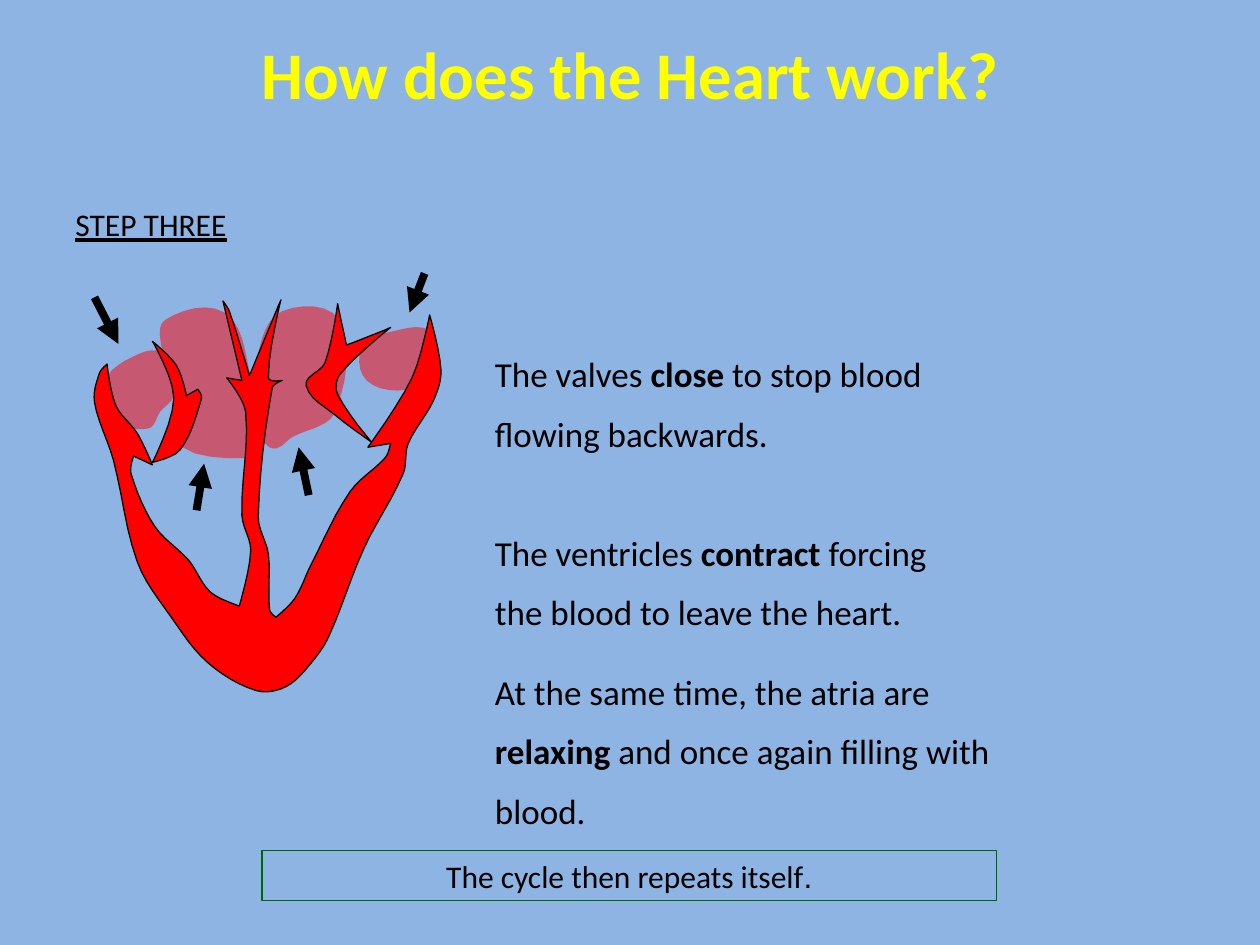
from math import hypot

from lxml.etree import SubElement
from pptx import Presentation
from pptx.dml.color import RGBColor
from pptx.enum.shapes import MSO_CONNECTOR, MSO_SHAPE
from pptx.enum.text import MSO_ANCHOR, MSO_AUTO_SIZE, PP_ALIGN
from pptx.oxml.ns import qn
from pptx.util import Inches, Pt

WIDE, HIGH = 10, 7.5
HUES = {"back": "8EB4E3", "title": "FFFF00", "ink": "000000",
        "heart": "FF0000", "frame": "006600"}

TITLE = "How does the Heart work?"
STEP = "STEP THREE"
# Each line: space before in points, then (text, bold) runs
BODY = [
    (0, [("The valves ", False), ("close", True), (" to stop blood", False)]),
    (10, [("flowing backwards.", False)]),
    (44, [("The ventricles ", False), ("contract", True), (" forcing", False)]),
    (10, [("the blood to leave the heart.", False)]),
    (21.5, [("At the same time, the atria are", False)]),
    (10, [("relaxing", True), (" and once again filling with", False)]),
    (10, [("blood.", False)]),
]
CLOSE = "The cycle then repeats itself"

# Outlines as x, y pairs in hundredths of an inch
BLOOD = [
    [83, 303, 93, 334, 118, 340, 127, 327, 138, 313, 130, 281, 110, 281],
    [205, 281, 207, 344, 217, 356, 232, 347, 266, 327, 269, 254, 224, 247],
    [145, 355, 203, 363, 198, 295, 178, 248, 131, 254, 129, 280, 139, 311],
    [288, 271, 291, 302, 328, 308, 344, 285, 341, 262, 307, 264],
]
WALL = [
    79, 296, 75, 319, 90, 365, 109, 446, 136, 490, 165, 526, 203, 548,
    227, 545, 248, 525, 261, 505, 289, 435, 320, 376, 324, 352, 344, 318,
    350, 294, 341, 250, 327, 300, 292, 355, 310, 352, 306, 363, 278, 390,
    247, 448, 234, 475, 219, 490, 214, 484, 213, 440, 205, 410, 216, 308,
    224, 302, 213, 300, 223, 238, 198, 298, 182, 247, 177, 239, 192, 302,
    180, 300, 195, 327, 192, 409, 199, 437, 190, 481, 167, 470, 150, 445,
    123, 418, 104, 376, 106, 362, 121, 369, 109, 344, 92, 322, 85, 289]
FLAPS = [
    [121, 271, 138, 316, 121, 367, 143, 357, 160, 316, 157, 309, 148, 314,
     140, 290],
    [268, 241, 258, 288, 243, 306, 268, 331, 295, 351, 268, 313, 270, 297,
     310, 260, 303, 263, 275, 274],
]
ARROWS = [((1.56, 4.05), (1.62, 3.68)), ((2.45, 3.93), (2.37, 3.55)),
          ((0.75, 2.36), (0.94, 2.73)), ((3.37, 2.17), (3.25, 2.48))]


def hue(name):
    return RGBColor.from_string(HUES[name])


def place(shape, box):
    for key, size in zip(("left", "top", "width", "height"), box):
        setattr(shape, key, Inches(size))


def write(par, text, **form):
    """Add a run; form holds font values, with its colour name under hue."""
    run = par.add_run()
    run.text = text
    run.font.color.rgb = hue(form.pop("hue", "ink"))
    for key, val in {"name": "Calibri", **form}.items():
        setattr(run.font, key, val)


def frame(shape):
    text = shape.text_frame
    form = {"word_wrap": True, "auto_size": MSO_AUTO_SIZE.NONE,
            "vertical_anchor": MSO_ANCHOR.TOP}
    for key, val in form.items():
        setattr(text, key, val)
    return text


def label(box):
    return frame(slide.shapes.add_textbox(*map(Inches, box)))


def smooth(flat, steps=6):
    """Run a closed curve through the points, with corners at sharp tips."""
    dots = list(zip(flat[::2], flat[1::2]))
    count = len(dots)

    def lean(i):
        (ax, ay), (x, y), (bx, by) = dots[i - 1], dots[i], dots[(i + 1) % count]
        if (x - ax) * (bx - x) + (y - ay) * (by - y) <= 0:
            return 0, 0
        size = hypot(bx - ax, by - ay)
        return (bx - ax) / size, (by - ay) / size

    curve = []
    for i, start in enumerate(dots):
        j = (i + 1) % count
        end = dots[j]
        reach = hypot(end[0] - start[0], end[1] - start[1]) / 3
        for t in (n / steps for n in range(steps)):
            u = 1 - t
            curve.append(tuple(
                10 * (u**3 * a + 3 * u * u * t * (a + reach * da)
                      + 3 * u * t * t * (b - reach * db) + t**3 * b)
                for a, b, da, db in zip(start, end, lean(i), lean(j))))
    return curve


def organ(flat, clear=False):
    first, *rest = smooth(flat)
    path = slide.shapes.build_freeform(*first, scale=Inches(1) / 1000)
    path.add_line_segments(rest, close=True)
    shape = path.convert_to_shape()
    shape.shadow.inherit = False
    shape.fill.solid()
    shape.fill.fore_color.rgb = hue("heart")
    if clear:
        tint = shape._element.spPr.find(".//" + qn("a:srgbClr"))
        SubElement(tint, qn("a:alpha"), val="50000")
        shape.line.fill.background()
    else:
        shape.line.color.rgb = hue("ink")
        shape.line.width = Pt(0.75)


def arrow(start, end):
    line = slide.shapes.add_connector(
        MSO_CONNECTOR.STRAIGHT, *map(Inches, start + end))
    line.line.color.rgb = hue("ink")
    line.line.width = Pt(4.5)
    props = line._element.spPr
    SubElement(props.find(qn("a:ln")), qn("a:tailEnd"), type="triangle")
    SubElement(props, qn("a:effectLst"))


deck = Presentation()
deck.slide_width, deck.slide_height = Inches(WIDE), Inches(HIGH)
slide = deck.slides.add_slide(deck.slide_layouts[5])
slide.background.fill.solid()
slide.background.fill.fore_color.rgb = hue("back")

head = slide.shapes.title
place(head, (0, 0.21, WIDE, 1.38))
par = frame(head).paragraphs[0]
par.alignment = PP_ALIGN.CENTER
write(par, TITLE, size=Pt(38), bold=True, hue="title")

for part in BLOOD:
    organ(part, clear=True)
for part in [WALL, *FLAPS]:
    organ(part)
for ends in ARROWS:
    arrow(*ends)

text = label((3.83, 2.75, WIDE / 2, 4.18))
for row, (gap, runs) in enumerate(BODY):
    par = text.add_paragraph() if row else text.paragraphs[0]
    par.space_before = Pt(gap)
    for words, bold in runs:
        write(par, words, size=Pt(20), bold=bold)

foot = slide.shapes.add_shape(
    MSO_SHAPE.RECTANGLE, *map(Inches, (2.08, 6.75, 5.83, 0.4)))
foot.shadow.inherit = False
foot.fill.background()
foot.line.color.rgb = hue("frame")
foot.line.width = Pt(0.75)
par = frame(foot).paragraphs[0]
par.alignment = PP_ALIGN.CENTER
write(par, CLOSE, size=Pt(18))
write(par, ".", size=Pt(18), name="Arial")

write(label((0.5, 1.58, 3.07, 0.4)).paragraphs[0], STEP,
      size=Pt(18), underline=True)

deck.save("out.pptx")
